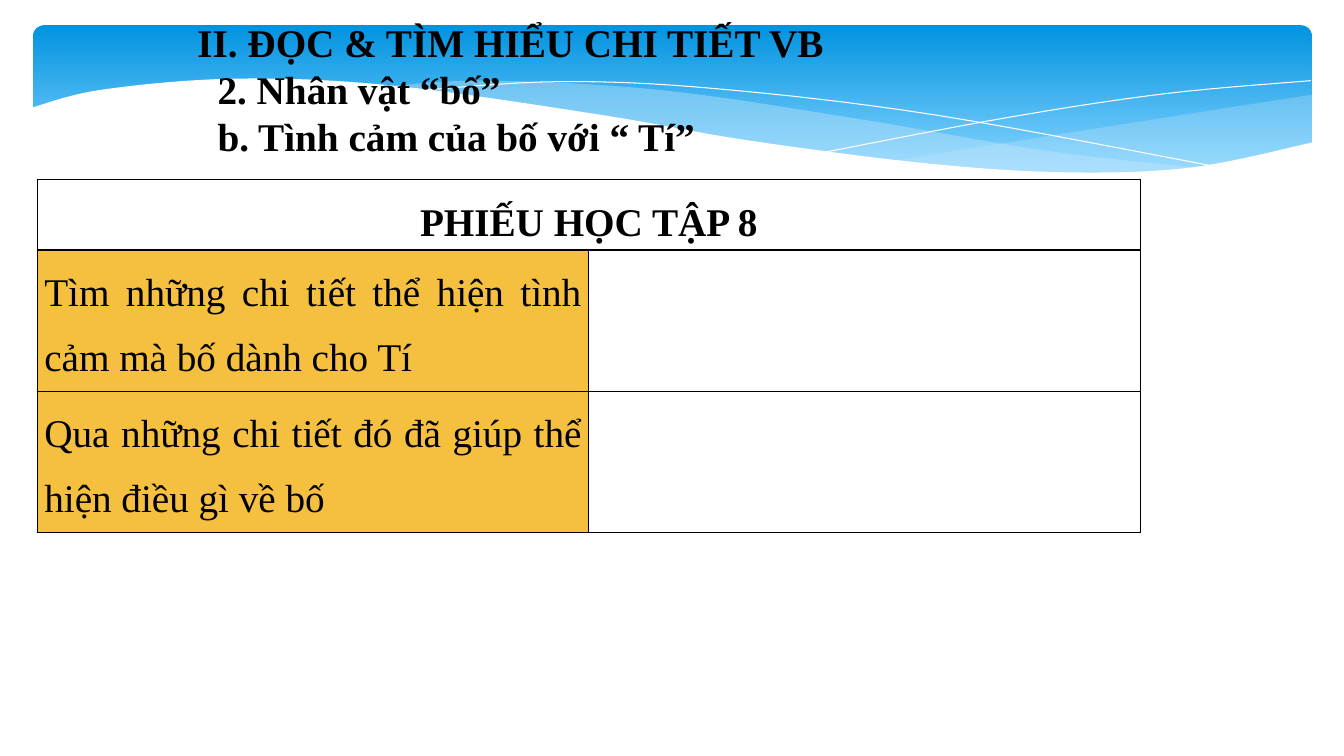
from dataclasses import dataclass
from typing import Optional

from lxml.etree import SubElement
from pptx import Presentation
from pptx.dml.color import RGBColor
from pptx.enum.shapes import MSO_SHAPE as Preset
from pptx.enum.text import MSO_AUTO_SIZE as AutoSize, PP_ALIGN as Align
from pptx.oxml.ns import qn
from pptx.util import Pt

PX = 9144  # 100 px to the inch
FONT = "Times New Roman"
FONT_SIZE = Pt(28)
BLACK = RGBColor(0x00, 0x00, 0x00)
WHITE = RGBColor(0xFF, 0xFF, 0xFF)
DEEP_BLUE = RGBColor(0x02, 0x93, 0xE0)
SKY_BLUE = RGBColor(0x83, 0xD3, 0xFE)
PALE_BLUE = RGBColor(0xC6, 0xE7, 0xFC)
AMBER = RGBColor(0xF5, 0xC0, 0x40)
CURVE_STEPS = 8

Point = tuple[float, float]


@dataclass(frozen=True)
class Wave:
    edges: list[list[Point]]  # each edge is a smooth curve through its knots
    fill: Optional[RGBColor] = None  # without a fill the wave is an open white line
    opacity: int = 100


@dataclass(frozen=True)
class Heading:
    left: int
    top: int
    width: int
    height: int
    lines: list[str]


@dataclass(frozen=True)
class Entry:
    row: int
    text: str
    align: Align
    bold: bool = False
    fill: Optional[RGBColor] = None


WAVES = [
    # Right-hand crest
    Wave([[(1301, 94), (1147, 118), (882, 160)],
          [(882, 160), (993, 169), (1113, 172), (1218, 162), (1301, 142)]], PALE_BLUE, 29),
    # Middle crest
    Wave([[(1190, 167), (1034, 149), (839, 116), (652, 89), (482, 80), (382, 86)],
          [(382, 86), (599, 116), (802, 150), (963, 168), (1090, 173), (1190, 167)]],
         PALE_BLUE, 40),
    # Thin crossing lines
    Wave([[(412, 90), (555, 81), (710, 88), (927, 114), (1210, 166)]]),
    Wave([[(818, 151), (997, 117), (1155, 93), (1300, 80)]]),
    # White area under the band
    Wave([[(1303, 141), (1183, 166), (1058, 171), (918, 162), (740, 139), (596, 114),
           (390, 85), (235, 78), (101, 89), (31, 107)],
          [(31, 224), (1303, 224)]], WHITE),
]

HEADINGS = [
    Heading(186, 13, 646, 57, ["II. ĐỌC & TÌM HIỂU CHI TIẾT VB"]),
    Heading(206, 60, 606, 104, ["2. Nhân vật “bố”", "b. Tình cảm của bố với “ Tí”"]),
]

TABLE_LEFT, TABLE_TOP, COLUMN_WIDTH = 37, 178, 547
ROW_HEIGHTS = [70, 140, 140]
ENTRIES = [
    Entry(0, "PHIẾU HỌC TẬP 8", Align.CENTER, bold=True),
    Entry(1, "Tìm những chi tiết thể hiện tình cảm mà bố dành cho Tí",
          Align.JUSTIFY, fill=AMBER),
    Entry(2, "Qua những chi tiết đó đã giúp thể hiện điều gì về bố",
          Align.JUSTIFY, fill=AMBER),
]


def smooth_edge(knots: list[Point]) -> list[Point]:
    """Sample a Catmull-Rom curve through the knots."""
    padded = [knots[0], *knots, knots[-1]]
    points = [knots[0]]
    for a, b, c, d in zip(padded, padded[1:], padded[2:], padded[3:]):
        for step in range(1, CURVE_STEPS + 1):
            t = step / CURVE_STEPS
            x, y = (q + t / 2 * (r - p + t * (2 * p - 5 * q + 4 * r - s
                                              + t * (3 * q - p - 3 * r + s)))
                    for p, q, r, s in zip(a, b, c, d))
            points.append((x, y))
    return points


def style_runs(paragraph, bold: bool) -> None:
    for run in paragraph.runs:
        run.font.name = FONT
        run.font.size = FONT_SIZE
        run.font.bold = bold
        run.font.color.rgb = BLACK


def draw_band(shapes) -> None:
    band = shapes.add_shape(Preset.ROUNDED_RECTANGLE, 33 * PX, 25 * PX, 1268 * PX, 156 * PX)
    band.adjustments[0] = 0.07
    band.shadow.inherit = False
    band.line.fill.background()
    band.fill.gradient()
    band.fill.gradient_angle = 270
    for stop, color, position in zip(band.fill.gradient_stops, (DEEP_BLUE, SKY_BLUE), (0, 0.9)):
        stop.color.rgb = color
        stop.position = position


def draw_wave(shapes, wave: Wave) -> None:
    start, *rest = [(round(x * PX), round(y * PX))
                    for edge in wave.edges for x, y in smooth_edge(edge)]
    builder = shapes.build_freeform(*start)
    builder.add_line_segments(rest, close=wave.fill is not None)
    outline = builder.convert_to_shape()
    outline.shadow.inherit = False
    if wave.fill is None:
        outline.fill.background()
        outline.line.color.rgb = WHITE
        outline.line.width = Pt(0)
        return
    outline.line.fill.background()
    outline.fill.solid()
    outline.fill.fore_color.rgb = wave.fill
    if wave.opacity < 100:
        color = next(outline.element.spPr.iter(qn("a:srgbClr")))
        SubElement(color, qn("a:alpha"), val=str(wave.opacity * 1000))


def draw_heading(shapes, heading: Heading) -> None:
    box = shapes.add_textbox(heading.left * PX, heading.top * PX,
                             heading.width * PX, heading.height * PX)
    frame = box.text_frame
    frame.word_wrap = True
    frame.auto_size = AutoSize.SHAPE_TO_FIT_TEXT
    frame.text = "\n".join(heading.lines)
    for paragraph in frame.paragraphs:
        style_runs(paragraph, bold=True)


def draw_borders(cell) -> None:
    properties = cell._tc.get_or_add_tcPr()
    for side in ("a:lnL", "a:lnR", "a:lnT", "a:lnB"):
        border = SubElement(properties, qn(side), w=str(Pt(1)))
        fill = SubElement(border, qn("a:solidFill"))
        SubElement(fill, qn("a:srgbClr"), val=str(BLACK))


def draw_worksheet(shapes) -> None:
    worksheet = shapes.add_table(len(ROW_HEIGHTS), 2, TABLE_LEFT * PX, TABLE_TOP * PX,
                                 2 * COLUMN_WIDTH * PX, sum(ROW_HEIGHTS) * PX).table
    worksheet.first_row = worksheet.horz_banding = False
    for column in worksheet.columns:
        column.width = COLUMN_WIDTH * PX
    for row, height in zip(worksheet.rows, ROW_HEIGHTS):
        row.height = height * PX
    for cell in worksheet.iter_cells():
        draw_borders(cell)
        cell.fill.background()
        cell.margin_left = cell.margin_right = 7 * PX
        cell.margin_top = cell.margin_bottom = 0
    worksheet.cell(0, 0).merge(worksheet.cell(0, 1))

    for entry in ENTRIES:
        cell = worksheet.cell(entry.row, 0)
        cell.text_frame.text = entry.text
        paragraph = cell.text_frame.paragraphs[0]
        paragraph.alignment = entry.align
        paragraph.line_spacing = 1.5
        style_runs(paragraph, entry.bold)
        if entry.fill is not None:
            cell.fill.solid()
            cell.fill.fore_color.rgb = entry.fill


def main() -> None:
    deck = Presentation()
    deck.slide_width, deck.slide_height = 1333 * PX, 750 * PX
    shapes = deck.slides.add_slide(deck.slide_layouts[6]).shapes

    # Decorated band
    draw_band(shapes)
    for wave in WAVES:
        draw_wave(shapes, wave)

    # Lesson headings and worksheet
    for heading in HEADINGS:
        draw_heading(shapes, heading)
    draw_worksheet(shapes)

    deck.save("out.pptx")


if __name__ == "__main__":
    main()
